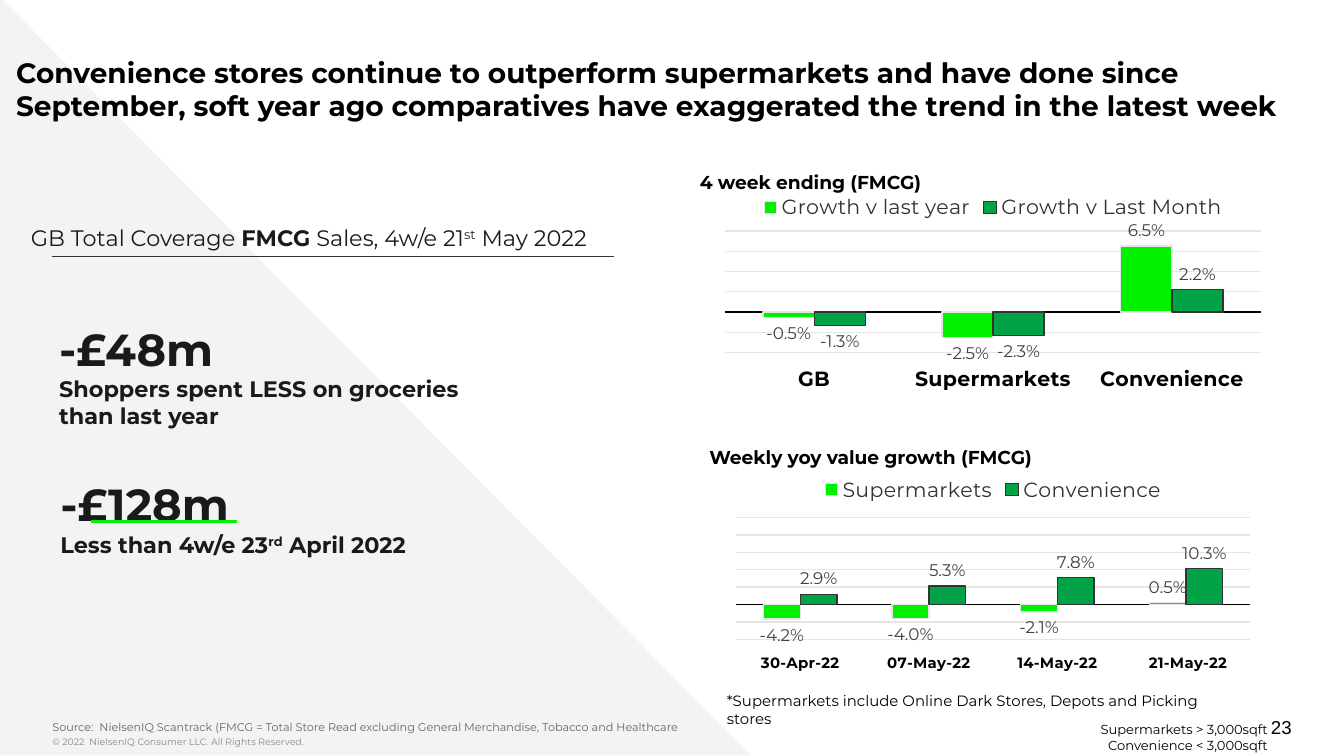
from dataclasses import dataclass

from lxml import etree
from pptx import Presentation
from pptx.chart.data import CategoryChartData
from pptx.dml.color import RGBColor
from pptx.enum.chart import XL_CHART_TYPE as ChartType
from pptx.enum.chart import XL_LABEL_POSITION as LabelPosition
from pptx.enum.chart import XL_LEGEND_POSITION as LegendPosition
from pptx.enum.chart import XL_TICK_LABEL_POSITION as TickLabels
from pptx.enum.chart import XL_TICK_MARK as TickMark
from pptx.enum.shapes import MSO_CONNECTOR as Connector
from pptx.enum.shapes import MSO_SHAPE as Shape
from pptx.enum.text import MSO_ANCHOR as Anchor
from pptx.enum.text import PP_ALIGN as Align
from pptx.oxml import parse_xml
from pptx.oxml.ns import nsdecls, qn
from pptx.util import Inches, Pt


@dataclass(frozen=True)
class Theme:
    """Colours, fonts and type sizes of the slide."""
    font: str = "Montserrat"
    number_font: str = "Arial"
    black: str = "000000"
    ink: str = "1A1A1A"
    rule: str = "333333"
    label: str = "404040"
    source: str = "666666"
    copyright: str = "888888"
    grid: str = "E5E5E5"
    wedge: str = "F3F3F3"
    lime: str = "00F000"
    green: str = "00A346"
    title: float = 15
    figure: float = 24
    body: float = 12
    legend: float = 11
    heading: float = 10
    value: float = 9
    note: float = 8
    definition: float = 7
    small: float = 6
    tiny: float = 5


@dataclass(frozen=True)
class Box:
    """A rectangle in inches."""
    left: float
    top: float
    width: float
    height: float

    def inches(self):
        """Return the four lengths for python-pptx."""
        return [Inches(v) for v in (self.left, self.top, self.width, self.height)]


THEME = Theme()


def set_font(font, size, color, bold=None, name=THEME.font):
    """Apply size, colour, weight and typeface to a font."""
    font.name, font.size, font.bold = name, Pt(size), bold
    font.color.rgb = RGBColor.from_string(color)


def add_text(slide, box, lines, color=THEME.black, inset=(0.1, 0.05), wrap=True,
             anchor=Anchor.TOP, align=Align.LEFT, name=THEME.font):
    """Place lines of (size, bold, runs), where a run is text or (text, style)."""
    frame = slide.shapes.add_textbox(*box.inches()).text_frame
    frame.word_wrap, frame.vertical_anchor = wrap, anchor
    frame.margin_left = frame.margin_right = Inches(inset[0])
    frame.margin_top = frame.margin_bottom = Inches(inset[1])
    for index, (size, bold, runs) in enumerate(lines):
        paragraph = frame.add_paragraph() if index else frame.paragraphs[0]
        paragraph.alignment = align
        set_font(paragraph.font, size, color, bold, name)
        for part in runs:
            text, style = (part, None) if isinstance(part, str) else part
            run = paragraph.add_run()
            run.text = text
            if style == "bold":
                run.font.bold = True
            elif style == "super":
                run._r.get_or_add_rPr().set("baseline", "30000")


def add_rule(slide, left, top, width, color, weight):
    """Draw a horizontal rule."""
    rule = slide.shapes.add_connector(
        Connector.STRAIGHT, Inches(left), Inches(top), Inches(left + width), Inches(top))
    rule.line.color.rgb, rule.line.width = RGBColor.from_string(color), Pt(weight)
    etree.SubElement(rule._element.spPr, qn("a:effectLst"))


def add_backdrop(slide, box):
    """Draw the pale triangle behind the content."""
    wedge = slide.shapes.add_shape(Shape.RIGHT_TRIANGLE, *box.inches())
    wedge.shadow.inherit = False
    wedge.fill.solid()
    wedge.fill.fore_color.rgb = RGBColor.from_string(THEME.wedge)
    wedge.line.fill.background()


def add_sales_summary(slide, box):
    """Place the coverage heading and the two sales figures."""
    add_text(slide, Box(box.left, box.top, box.width, 0.27),
             [(THEME.body, None, ["GB Total Coverage ", ("FMCG", "bold"),
                                  " Sales, 4w/e 21", ("st", "super"), " May 2022"])],
             THEME.ink, (0, 0.05))
    add_rule(slide, box.left + 0.16, box.top + 0.29, 4.18, THEME.rule, 0.75)
    figures = [
        (0.21, 0.77, "-£48m", ["Shoppers spent LESS on groceries than last year"]),
        (0.22, 1.93, "-£128m", ["Less than 4w/e 23", ("rd", "super"), " April 2022"]),
    ]
    for left, top, amount, caption in figures:
        add_text(slide, Box(box.left + left, box.top + top, 3.03, 0.82),
                 [(THEME.figure, True, [amount]), (THEME.body, True, caption)],
                 THEME.ink, (0, 0))
    add_rule(slide, box.left + 0.45, box.top + 2.26, 1.08, THEME.lime, 1.5)


def set_plot_area(chart, plot):
    """Fix the inner plot area as fractions of the chart."""
    area = chart._chartSpace.chart.plotArea
    for layout in area.findall(qn("c:layout")):
        area.remove(layout)
    sizes = "".join(f'<c:{tag} val="{value}"/>' for tag, value in zip("xywh", plot))
    area.insert(0, parse_xml(
        f'<c:layout {nsdecls("c")}><c:manualLayout><c:layoutTarget val="inner"/>'
        f'<c:xMode val="edge"/><c:yMode val="edge"/>{sizes}</c:manualLayout></c:layout>'))


def add_growth_chart(slide, box, heading, heading_offset, categories, series,
                     category_size, scale, plot):
    """Place a headed column chart of two growth series."""
    data = CategoryChartData(number_format="0.0%")
    data.categories = categories
    for name, values in series:
        data.add_series(name, values)
    chart = slide.shapes.add_chart(
        ChartType.COLUMN_CLUSTERED, *box.inches(), data).chart
    set_font(chart.font, THEME.heading, THEME.black, name=THEME.number_font)
    chart.has_title = False
    chart.has_legend = True
    chart.legend.position, chart.legend.include_in_layout = LegendPosition.TOP, False
    set_font(chart.legend.font, THEME.legend, THEME.rule)

    categories_axis, values_axis = chart.category_axis, chart.value_axis
    categories_axis.tick_label_position = TickLabels.LOW
    categories_axis.major_tick_mark = TickMark.NONE
    categories_axis.format.line.color.rgb = RGBColor.from_string(THEME.black)
    categories_axis.format.line.width = Pt(0.75)
    set_font(categories_axis.tick_labels.font, category_size, THEME.black, True)
    values_axis.minimum_scale, values_axis.maximum_scale, values_axis.major_unit = scale
    values_axis.visible = False
    grid = values_axis.major_gridlines.format.line
    grid.color.rgb, grid.width = RGBColor.from_string(THEME.grid), Pt(0.75)

    columns = chart.plots[0]
    columns.gap_width, columns.overlap, columns.vary_by_categories = 150, 0, False
    styles = [(THEME.lime, THEME.grid), (THEME.green, THEME.rule)]
    for bars, (fill, outline) in zip(columns.series, styles):
        bars.invert_if_negative = False
        bars.format.fill.solid()
        bars.format.fill.fore_color.rgb = RGBColor.from_string(fill)
        bars.format.line.color.rgb = RGBColor.from_string(outline)
        bars.format.line.width = Pt(0.75)
        labels = bars.data_labels
        labels.show_value, labels.position = True, LabelPosition.OUTSIDE_END
        labels.number_format, labels.number_format_is_linked = "0.0%", False
        set_font(labels.font, THEME.value, THEME.label)
    set_plot_area(chart, plot)
    across, down = heading_offset
    add_text(slide, Box(box.left + across, box.top + down, 2.7, 0.27),
             [(THEME.heading, True, [heading])], wrap=False)


def add_footer(slide, box):
    """Place the source, copyright, notes and page number."""
    def part(left, top, width, height):
        return Box(box.left + left, box.top + top, width, height)

    add_text(slide, part(0, 0.26, 5, 0.2), [(THEME.small, None, [
        "Source:  NielsenIQ Scantrack (FMCG = Total Store Read excluding "
        "General Merchandise, Tobacco and Healthcare"])], THEME.source, (0, 0))
    add_text(slide, part(0, 0.33, 5.54, 0.2), [(THEME.tiny, None, [
        "© 2022  NielsenIQ Consumer LLC. All Rights Reserved."])],
        THEME.copyright, (0, 0.05))
    add_text(slide, part(4.92, 0, 3.93, 0.37), [(THEME.note, None, [
        "*Supermarkets include Online Dark Stores, Depots and Picking stores"])])
    add_text(slide, part(6.17, 0.22, 2.97, 0.34), [
        (THEME.definition, None, ["Supermarkets > 3,000sqft"]),
        (THEME.definition, None, ["Convenience < 3,000sqft"])], align=Align.RIGHT)
    add_text(slide, part(6.97, 0.16, 2.25, 0.3), [(THEME.heading, None, ["23"])],
             inset=(0, 0.05), anchor=Anchor.MIDDLE, align=Align.RIGHT,
             name=THEME.number_font)


def main():
    """Build and save the slide."""
    deck = Presentation()
    deck.slide_width, deck.slide_height = Inches(10), Inches(10) * 9 // 16
    slide = deck.slides.add_slide(deck.slide_layouts[6])
    add_backdrop(slide, Box(0, -0.02, 5.59, 5.64))
    add_text(slide, Box(0.12, 0.31, 9.88, 0.7), [(THEME.title, True, [
        "Convenience stores continue to outperform supermarkets and have done since "
        "September, soft year ago comparatives have exaggerated the trend in the "
        "latest week"])], inset=(0, 0.1))
    add_sales_summary(slide, Box(0.23, 1.62, 4.79, 2.7))
    add_growth_chart(
        slide, Box(5.31, 1.33, 4.16, 1.62), "4 week ending (FMCG)", (-0.2, -0.11),
        ["GB", "Supermarkets", "Convenience"],
        [("Growth v last year", [-0.005, -0.025, 0.065]),
         ("Growth v Last Month", [-0.013, -0.023, 0.022])],
        THEME.legend, (-0.04, 0.08, 0.02), (0.02, 0.24, 0.96, 0.56))
    add_growth_chart(
        slide, Box(5.31, 3.43, 4.16, 1.62), "Weekly yoy value growth (FMCG)",
        (-0.13, -0.16), ["30-Apr-22", "07-May-22", "14-May-22", " 21-May-22"],
        [("Supermarkets", [-0.042, -0.04, -0.021, 0.005]),
         ("Convenience", [0.029, 0.053, 0.078, 0.103])],
        THEME.note, (-0.1, 0.25, 0.05), (0.04, 0.26, 0.92, 0.56))
    add_footer(slide, Box(0.39, 5.1, 9.22, 0.52))
    deck.save("out.pptx")


if __name__ == "__main__":
    main()
